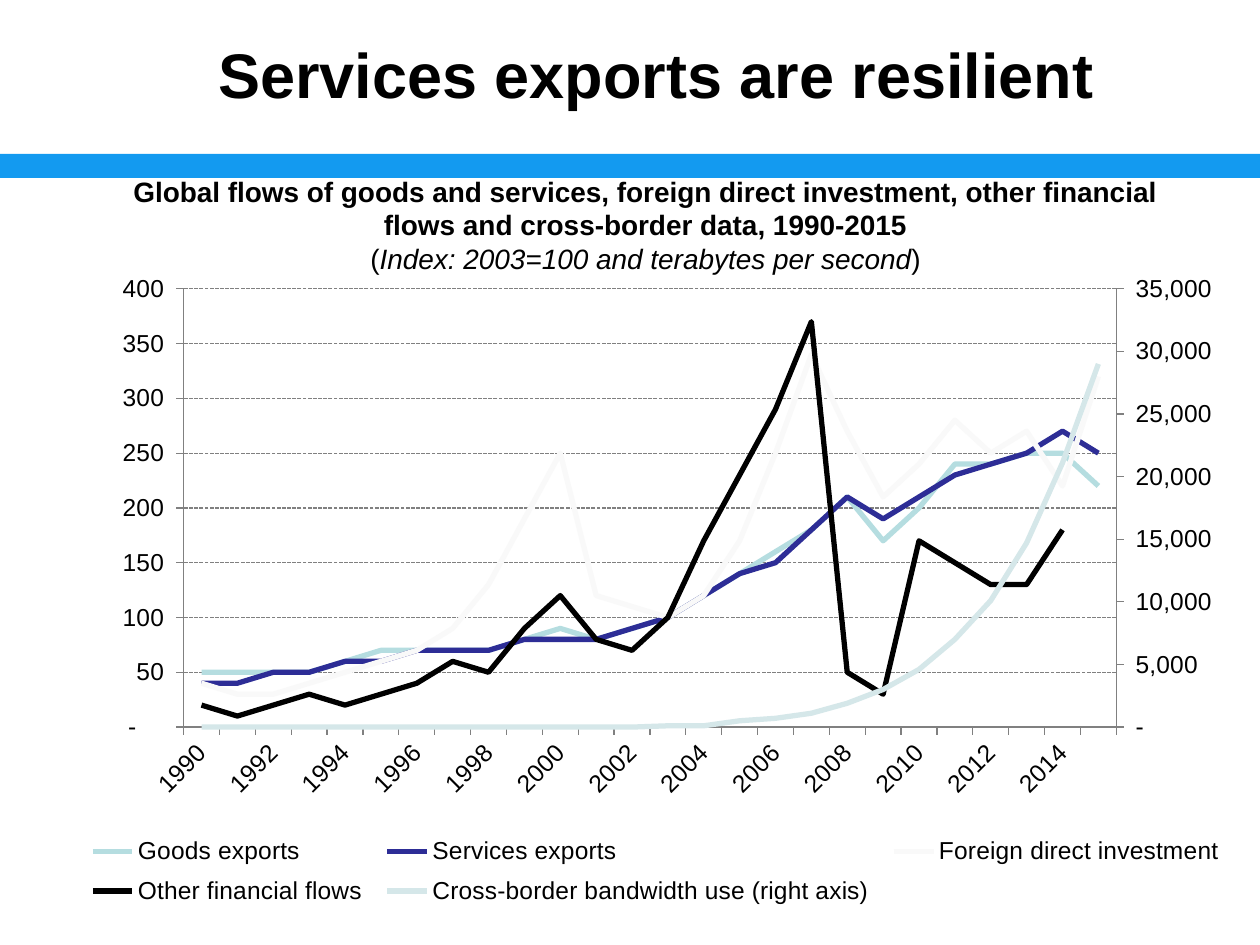
"""Build a slide charting the resilience of services exports, 1990-2015."""
import copy

import pptx
import pptx.chart.data
import pptx.dml.color
import pptx.enum.chart
import pptx.enum.dml
import pptx.enum.shapes
import pptx.enum.text
import pptx.oxml
import pptx.oxml.ns
import pptx.util

RGBColor = pptx.dml.color.RGBColor
BLACK = RGBColor(0x00, 0x00, 0x00)
GREY = RGBColor(0x80, 0x80, 0x80)
BAND_BLUE = RGBColor(0x13, 0x9A, 0xF0)
AQUA = RGBColor(0xB5, 0xDD, 0xE0)
NAVY = RGBColor(0x2D, 0x2D, 0x96)
OFF_WHITE = RGBColor(0xF9, 0xF9, 0xF9)
PALE_AQUA = RGBColor(0xD5, 0xE7, 0xE9)

FONT = "Arial"
PX = 914400 // 126
TITLE = "Services exports are resilient"
CAPTION = [
    [("Global flows of goods and services, foreign direct investment, other financial "
      "flows and cross-border data, 1990-2015", True, False)],
    [("(", False, False), ("Index: 2003=100 and terabytes per second", False, True),
     (")", False, False)],
]
YEARS = [str(year) for year in range(1990, 2016)]
SERIES = [
    ("Goods exports", AQUA,
     [50, 50, 50, 50, 60, 70, 70, 70, 70, 80, 90, 80, 90, 100, 120, 140, 160, 180,
      210, 170, 200, 240, 240, 250, 250, 220]),
    ("Services exports", NAVY,
     [40, 40, 50, 50, 60, 60, 70, 70, 70, 80, 80, 80, 90, 100, 120, 140, 150, 180,
      210, 190, 210, 230, 240, 250, 270, 250]),
    ("Foreign direct investment", OFF_WHITE,
     [40, 30, 30, 40, 50, 60, 70, 90, 130, 190, 250, 120, 110, 100, 120, 170, 250, 340,
      270, 210, 240, 280, 250, 270, 220, 320]),
    ("Other financial flows", BLACK,
     [20, 10, 20, 30, 20, 30, 40, 60, 50, 90, 120, 80, 70, 100, 170, 230, 290, 370,
      50, 30, 170, 150, 130, 130, 180, None]),
    ("Cross-border bandwidth use (right axis)", PALE_AQUA,
     [0] * 13 + [100, 100, 500, 700, 1100, 1900, 3000, 4600, 7000, 10100, 14700,
                 21100, 29000]),
]
NUMBER_FORMAT = '_(* #,##0_);_(* \\(#,##0\\);_(* "-"??_);_(@_)'
LEFT_SCALE = (400, 50)
RIGHT_SCALE = (35000, 5000)
PLOT_AREA = (0.1, 0.02, 0.78, 0.67)
LEGEND_AREA = (0.01, 0.84, 0.97, 0.14)


def box(*lengths):
    return [length * PX for length in lengths]


def style(font, size, bold=False, italic=False):
    font.name, font.size = FONT, pptx.util.Pt(size)
    font.bold, font.italic = bold, italic
    font.color.rgb = BLACK


def manual_layout(area, inner=False):
    target = '<c:layoutTarget val="inner"/>' if inner else ""
    sizes = "".join(f'<c:{name} val="{value}"/>' for name, value in zip("xywh", area))
    return pptx.oxml.parse_xml(
        f'<c:layout {pptx.oxml.ns.nsdecls("c")}><c:manualLayout>{target}'
        f'<c:xMode val="edge"/><c:yMode val="edge"/>{sizes}</c:manualLayout></c:layout>')


def set_value(parent, tag, value):
    parent.find(pptx.oxml.ns.qn(tag)).set("val", str(value))


def drop_layout(element):
    for layout in element.xpath("./c:layout"):
        element.remove(layout)


def add_right_axis(chart):
    plot_area = chart._chartSpace.chart.plotArea
    line_chart = plot_area.xpath("./c:lineChart")[0]
    right_chart = copy.deepcopy(line_chart)
    left_series = line_chart.xpath("./c:ser")
    right_series = right_chart.xpath("./c:ser")
    line_chart.remove(left_series[-1])
    for series in right_series[:-1]:
        right_chart.remove(series)
    line_chart.addnext(right_chart)
    for axis_id, number in zip(right_chart.xpath("./c:axId"), (5001, 5002)):
        axis_id.set("val", str(number))

    category_axis = plot_area.xpath("./c:catAx")[0]
    value_axis = plot_area.xpath("./c:valAx")[0]
    hidden_axis, right_axis = copy.deepcopy(category_axis), copy.deepcopy(value_axis)
    value_axis.addnext(right_axis)
    right_axis.addnext(hidden_axis)
    for axis, own, other in ((hidden_axis, 5001, 5002), (right_axis, 5002, 5001)):
        set_value(axis, "c:axId", own)
        set_value(axis, "c:crossAx", other)
    set_value(hidden_axis, "c:delete", 1)
    set_value(right_axis, "c:axPos", "r")
    set_value(right_axis, "c:crosses", "max")
    set_value(right_axis, "c:majorUnit", RIGHT_SCALE[1])
    set_value(right_axis.xpath("./c:scaling")[0], "c:max", RIGHT_SCALE[0])
    right_axis.remove(right_axis.xpath("./c:majorGridlines")[0])


def add_flow_chart(slide):
    data = pptx.chart.data.CategoryChartData()
    data.categories = YEARS
    for name, _, values in SERIES:
        data.add_series(name, values)
    chart = slide.shapes.add_chart(
        pptx.enum.chart.XL_CHART_TYPE.LINE, *box(64, 275, 1196, 655), data).chart
    chart.has_title = False
    style(chart.font, 14)
    chart.plots[0].vary_by_categories = False
    for series, (_, color, _) in zip(chart.plots[0].series, SERIES):
        series.smooth = False
        series.marker.style = pptx.enum.chart.XL_MARKER_STYLE.NONE
        series.format.line.color.rgb = color
        series.format.line.width = pptx.util.Pt(3)

    for axis in (chart.category_axis, chart.value_axis):
        axis.format.line.color.rgb = GREY
        axis.major_tick_mark = pptx.enum.chart.XL_TICK_MARK.OUTSIDE
        axis.minor_tick_mark = pptx.enum.chart.XL_TICK_MARK.NONE
        style(axis.tick_labels.font, 14)
    category_element = chart.category_axis._element
    category_element.xpath("./c:txPr/a:bodyPr")[0].set("rot", "-2700000")
    skip = pptx.oxml.parse_xml(
        f'<c:tickLblSkip {pptx.oxml.ns.nsdecls("c")} val="2"/>')
    category_element.xpath("./c:noMultiLvlLbl")[0].addprevious(skip)

    value_axis = chart.value_axis
    value_axis.minimum_scale = 0
    value_axis.maximum_scale, value_axis.major_unit = LEFT_SCALE
    value_axis.tick_labels.number_format = NUMBER_FORMAT
    value_axis.tick_labels.number_format_is_linked = False
    value_axis.has_major_gridlines = True
    gridline = value_axis.major_gridlines.format.line
    gridline.color.rgb = GREY
    gridline.width = pptx.util.Pt(0.75)
    gridline.dash_style = pptx.enum.dml.MSO_LINE.SQUARE_DOT
    add_right_axis(chart)

    plot_area = chart._chartSpace.chart.plotArea
    drop_layout(plot_area)
    plot_area.insert(0, manual_layout(PLOT_AREA, inner=True))
    chart.has_legend = True
    chart.legend.position = pptx.enum.chart.XL_LEGEND_POSITION.RIGHT
    chart.legend.include_in_layout = False
    style(chart.legend.font, 14)
    legend = chart.legend._element
    drop_layout(legend)
    legend.xpath("./c:legendPos")[0].addnext(manual_layout(LEGEND_AREA))


def add_band(slide):
    band = slide.shapes.add_shape(
        pptx.enum.shapes.MSO_SHAPE.RECTANGLE, *box(0, 154, 1260, 24))
    band.shadow.inherit = False
    band.fill.solid()
    band.fill.fore_color.rgb = BAND_BLUE
    band.line.fill.background()


def add_caption(slide):
    frame = slide.shapes.add_textbox(*box(105, 168, 1081, 115)).text_frame
    frame.word_wrap = True
    for index, parts in enumerate(CAPTION):
        paragraph = frame.add_paragraph() if index else frame.paragraphs[0]
        paragraph.alignment = pptx.enum.text.PP_ALIGN.CENTER
        for text, bold, italic in parts:
            run = paragraph.add_run()
            run.text = text
            style(run.font, 16, bold, italic)


def main():
    presentation = pptx.Presentation()
    presentation.slide_width, presentation.slide_height = box(1260, 945)
    slide = presentation.slides.add_slide(presentation.slide_layouts[5])
    title = slide.shapes.title
    title.left, title.top, title.width, title.height = box(73, 10, 1166, 126)
    title.text_frame.text = TITLE
    title.text_frame.vertical_anchor = pptx.enum.text.MSO_ANCHOR.MIDDLE
    paragraph = title.text_frame.paragraphs[0]
    paragraph.alignment = pptx.enum.text.PP_ALIGN.CENTER
    style(paragraph.runs[0].font, 36, bold=True)
    add_band(slide)
    add_caption(slide)
    add_flow_chart(slide)
    presentation.save("out.pptx")


if __name__ == "__main__":
    main()
